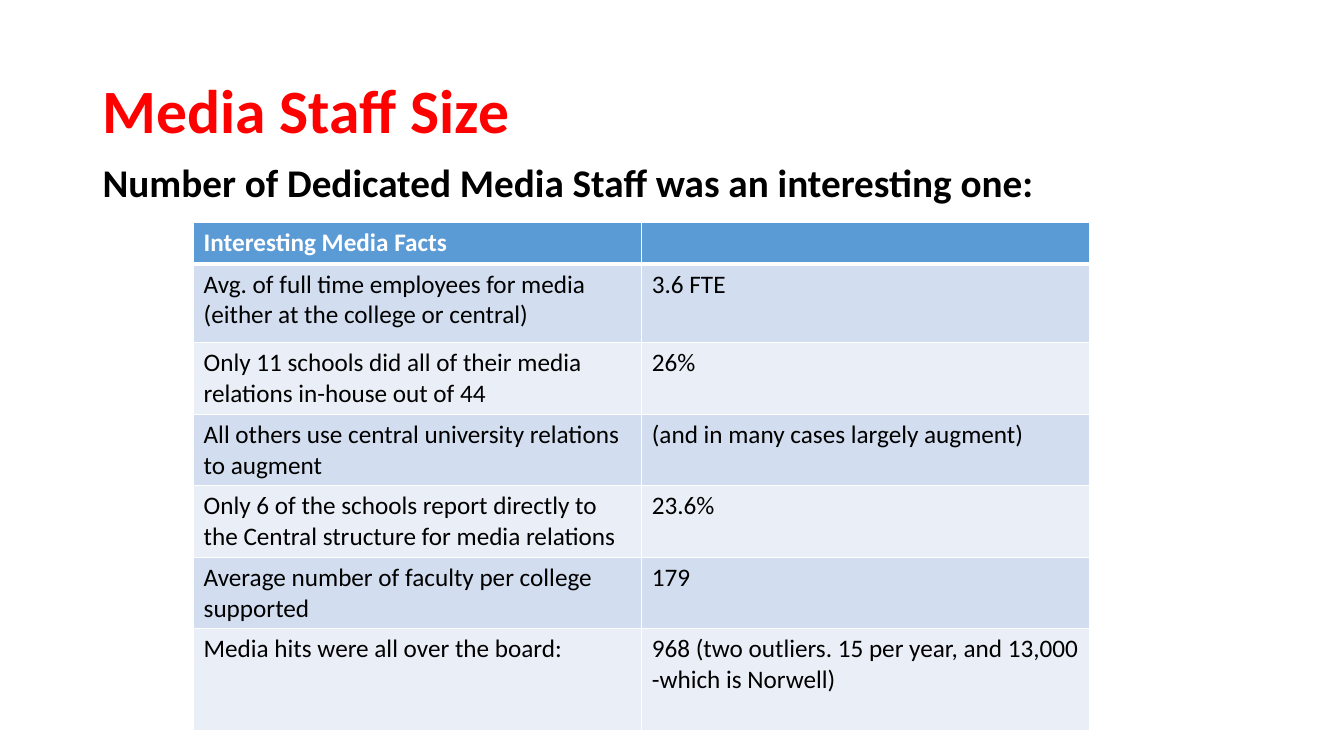
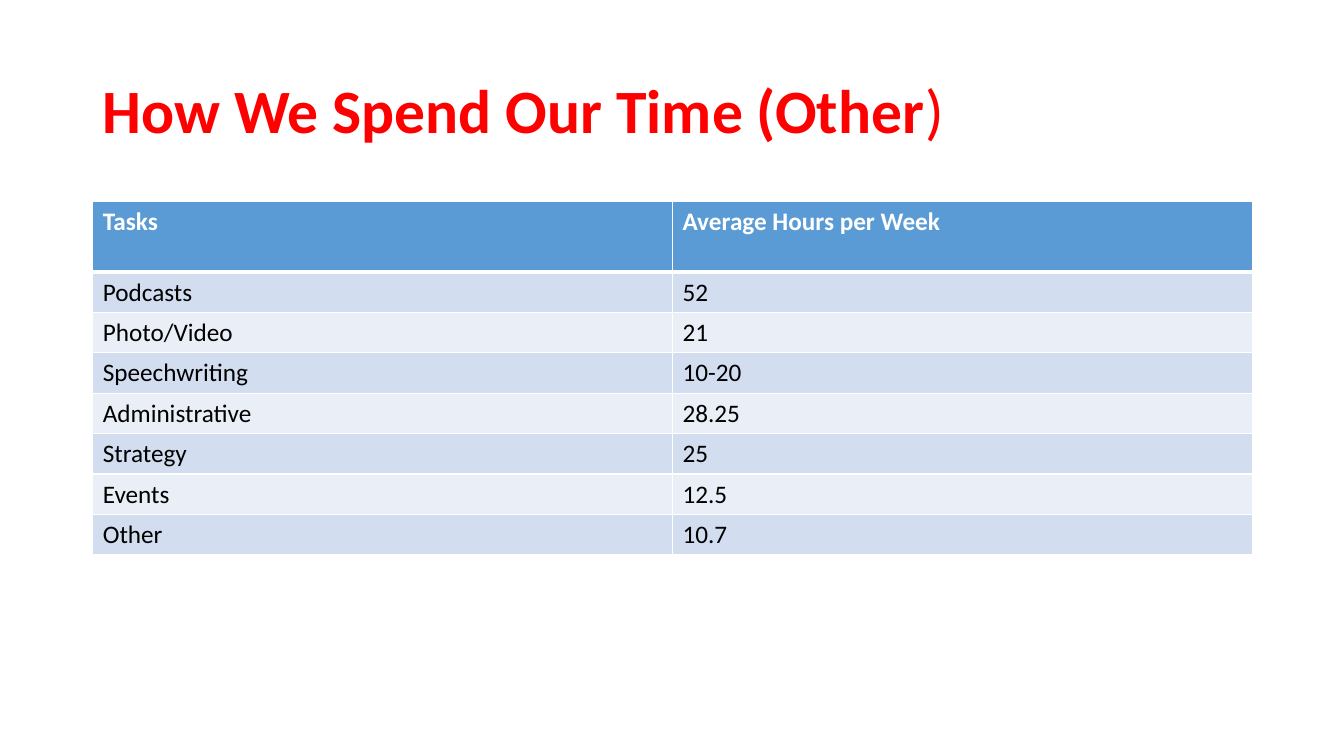
from dataclasses import dataclass

from lxml import etree
from pptx import Presentation
from pptx.dml.color import RGBColor
from pptx.enum.text import MSO_ANCHOR
from pptx.oxml.ns import qn
from pptx.util import Inches, Pt

MIDDLE = MSO_ANCHOR.MIDDLE
TOP = MSO_ANCHOR.TOP


@dataclass(frozen=True)
class Theme:
    font: str = "Calibri"
    title_color: str = "FF0000"
    text_color: str = "000000"
    header_text: str = "FFFFFF"
    header_fill: str = "5B9BD5"
    band_fills: tuple = ("D2DEEF", "EAEFF7")
    border_color: str = "FFFFFF"
    border: float = 1
    header_border: float = 3
    title_size: int = 44
    subtitle_size: int = 28
    table_size: int = 18
    margin: float = 0.92
    content_width: float = 11.5


THEME = Theme()


def style_font(font, size, color, bold):
    font.name = THEME.font
    font.size = Pt(size)
    font.bold = bold
    font.color.rgb = RGBColor.from_string(color)


def add_text(slide, runs, top, height, size, color, anchor=TOP, space_before=0):
    """Add one bold paragraph; each run is (text, bold override or None)."""
    box = slide.shapes.add_textbox(Inches(THEME.margin), Inches(top),
                                   Inches(THEME.content_width), Inches(height))
    frame = box.text_frame
    frame.word_wrap = True
    frame.vertical_anchor = anchor
    paragraph = frame.paragraphs[0]
    paragraph.line_spacing = 0.9
    paragraph.space_before = Pt(space_before)
    style_font(paragraph.font, size, color, True)
    for text, bold in runs:
        run = paragraph.add_run()
        run.text = text
        run.font.bold = bold


def add_title(slide, *runs):
    add_text(slide, runs, 0.4, 1.45, THEME.title_size, THEME.title_color, MIDDLE)


def set_borders(cell, widths):
    """Draw the left, right, top and bottom borders, in that order."""
    properties = cell._tc.get_or_add_tcPr()
    for index, (side, width) in enumerate(zip("LRTB", widths)):
        line = etree.Element(qn(f"a:ln{side}"), w=str(Pt(width)))
        fill = etree.SubElement(line, qn("a:solidFill"))
        etree.SubElement(fill, qn("a:srgbClr"), val=THEME.border_color)
        properties.insert(index, line)


def style_cell(cell, row_index):
    is_header = row_index == 0
    bands = THEME.band_fills
    fill = THEME.header_fill if is_header else bands[(row_index - 1) % len(bands)]
    cell.fill.solid()
    cell.fill.fore_color.rgb = RGBColor.from_string(fill)
    color = THEME.header_text if is_header else THEME.text_color
    style_font(cell.text_frame.paragraphs[0].font, THEME.table_size, color, is_header)
    # The thick rule is shared by the header and the row under it
    top = THEME.header_border if row_index == 1 else THEME.border
    bottom = THEME.header_border if is_header else THEME.border
    set_borders(cell, (THEME.border, THEME.border, top, bottom))


def add_banded_table(slide, rows, left, top, width, row_heights):
    column_count = len(rows[0])
    table = slide.shapes.add_table(len(rows), column_count, Inches(left), Inches(top),
                                   Inches(width), Inches(sum(row_heights))).table
    for column in table.columns:
        column.width = Inches(width / column_count)
    for row_index, (values, height) in enumerate(zip(rows, row_heights)):
        table.rows[row_index].height = Inches(height)
        for column_index, value in enumerate(values):
            cell = table.cell(row_index, column_index)
            cell.text = value
            style_cell(cell, row_index)


def build_staff_slide(slide):
    add_title(slide, ("Media Staff Size", None))
    add_text(slide, [("Number of Dedicated Media Staff was an interesting one:", None)],
             1.57, 0.6, THEME.subtitle_size, THEME.text_color, space_before=10)
    facts = [
        ("Interesting Media Facts", ""),
        ("Avg. of full time employees for media (either at the college or central)",
         "3.6 FTE"),
        ("Only 11 schools did all of their media relations in-house out of 44", "26%"),
        ("All others use central university relations to augment",
         "(and in many cases largely augment)"),
        ("Only 6 of the schools report directly to the Central structure for media relations",
         "23.6%"),
        ("Average number of faculty per college supported", "179"),
        ("Media hits were all over the board:",
         "968 (two outliers. 15 per year, and 13,000 -which is Norwell)"),
    ]
    add_banded_table(slide, facts, 1.92, 2.21, 8.89, [0.41, 0.78] + [0.71] * 4 + [1.01])


def build_time_slide(slide):
    add_title(slide, ("How We Spend Our Time (Other", None), (")", False))
    tasks = [
        ("Tasks", "Average Hours per Week"),
        ("Podcasts", "52"),
        ("Photo/Video", "21"),
        ("Speechwriting", "10-20"),
        ("Administrative", "28.25"),
        ("Strategy", "25"),
        ("Events", "12.5"),
        ("Other", "10.7"),
    ]
    add_banded_table(slide, tasks, THEME.margin, 2, THEME.content_width,
                     [0.7] + [0.4] * (len(tasks) - 1))


def main():
    presentation = Presentation()
    presentation.slide_width = Inches(13.33)
    presentation.slide_height = Inches(7.5)
    blank_layout = presentation.slide_layouts[6]
    for build in (build_staff_slide, build_time_slide):
        build(presentation.slides.add_slide(blank_layout))
    presentation.save("out.pptx")


if __name__ == "__main__":
    main()
